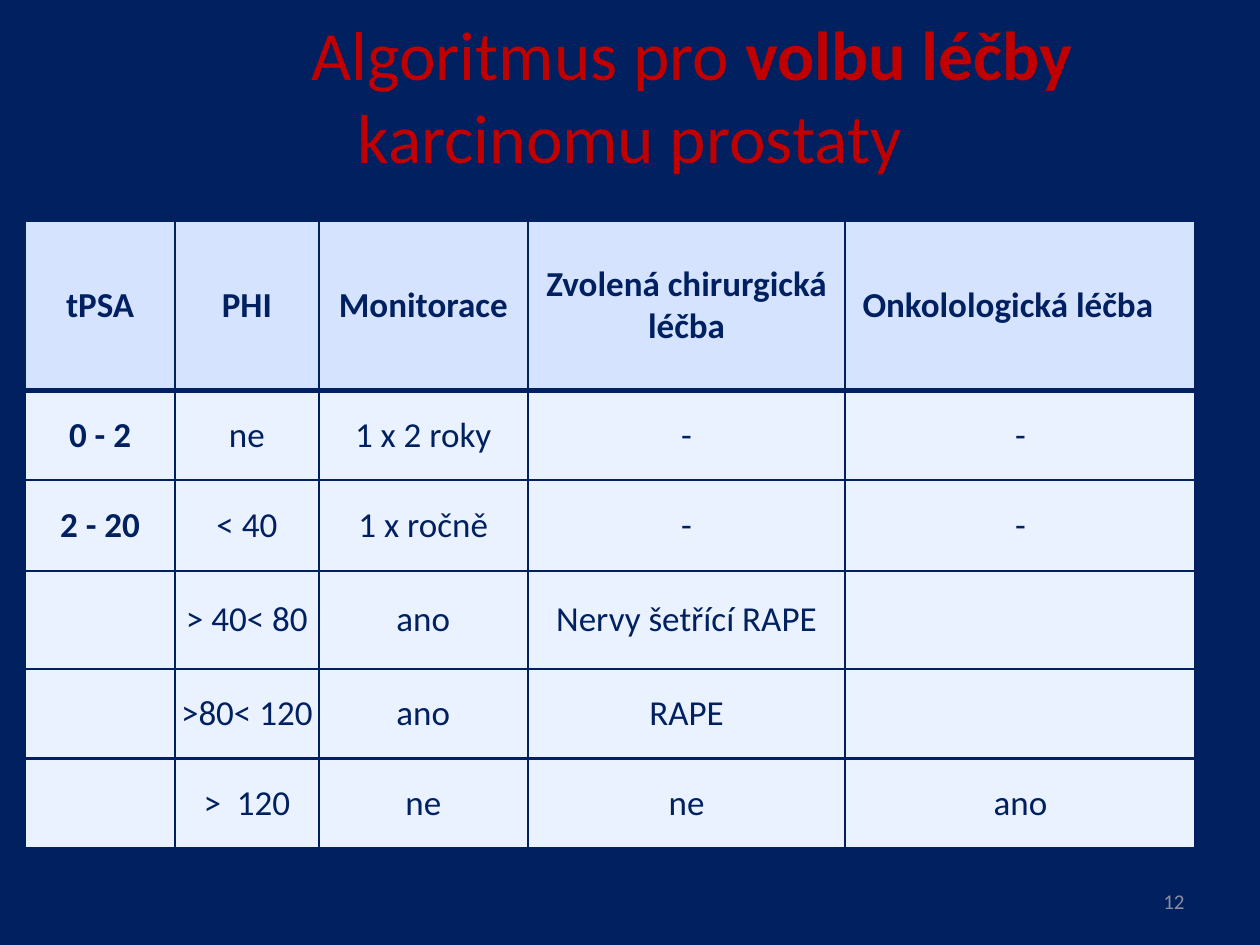
from dataclasses import dataclass

from lxml.etree import SubElement
from pptx import Presentation
from pptx.dml.color import RGBColor
from pptx.enum.text import MSO_ANCHOR, PP_ALIGN
from pptx.oxml.ns import qn
from pptx.util import Inches, Pt

COLORS = {"navy": "002060", "red": "C00000", "gray": "8C8D9D",
          "head": "D5E3FF", "body": "EAF1FF"}
FONT = "Calibri"


@dataclass
class Row:
    height: float
    cells: tuple[str, ...]


WIDTHS = (1.19, 1.14, 1.66, 2.52, 2.78)
ROWS = (
    Row(1.35, ("tPSA", "PHI", "Monitorace", "Zvolená chirurgická léčba",
               "Onkolologická léčba")),
    Row(0.71, ("0 - 2", "ne", "1 x 2 roky", "-", "-")),
    Row(0.72, ("2 - 20", "< 40", "1 x ročně", "-", "-")),
    Row(0.78, ("", "> 40< 80", "ano", "Nervy šetřící RAPE", "")),
    Row(0.71, ("", ">80< 120", "ano", "RAPE", "")),
    Row(0.71, ("", ">  120", "ne", "ne", "ano")),
)


def rgb(name: str) -> RGBColor:
    return RGBColor.from_string(COLORS[name])


def write(frame, text: str, *, size: float, color: str, bold: bool = False,
          align=PP_ALIGN.CENTER) -> None:
    """Add one run to the first paragraph of a text frame."""
    para = frame.paragraphs[0]
    para.alignment = align
    run = para.add_run()
    run.text = text
    font = run.font
    font.name, font.size, font.bold = FONT, Pt(size), bold
    font.color.rgb = rgb(color)


def add_box(slide, left: float, top: float, width: float, height: float):
    box = slide.shapes.add_textbox(Inches(left), Inches(top),
                                   Inches(width), Inches(height))
    frame = box.text_frame
    frame.word_wrap = True
    frame.vertical_anchor = MSO_ANCHOR.MIDDLE
    return frame


def add_edge(cell, side: str, width: float) -> None:
    line = SubElement(cell._tc.get_or_add_tcPr(), qn(f"a:ln{side}"),
                      w=str(Pt(width)))
    fill = SubElement(line, qn("a:solidFill"))
    SubElement(fill, qn("a:srgbClr"), val=COLORS["navy"])


def fill_cell(cell, text: str, row: int, col: int) -> None:
    cell.margin_left = cell.margin_top = cell.margin_bottom = 0
    # The last heading sits a little left of centre
    cell.margin_right = Inches(0.2 if (row, col) == (0, 4) else 0)
    cell.vertical_anchor = MSO_ANCHOR.MIDDLE
    for side in "LRTB":
        thick = (row, side) in ((0, "B"), (1, "T"))
        add_edge(cell, side, 3 if thick else 1.5)
    cell.fill.solid()
    cell.fill.fore_color.rgb = rgb("body" if row else "head")
    if text:
        write(cell.text_frame, text, size=20, color="navy",
              bold=row == 0 or col == 0)


def add_grid(slide) -> None:
    height = sum(row.height for row in ROWS)
    table = slide.shapes.add_table(
        len(ROWS), len(WIDTHS), Inches(0.2), Inches(1.75),
        Inches(sum(WIDTHS)), Inches(height)).table
    for col, width in enumerate(WIDTHS):
        table.columns[col].width = Inches(width)
    for i, row in enumerate(ROWS):
        table.rows[i].height = Inches(row.height)
        for j, text in enumerate(row.cells):
            fill_cell(table.cell(i, j), text, i, j)


def main() -> None:
    deck = Presentation()
    deck.slide_width, deck.slide_height = Inches(10), Inches(7.5)
    slide = deck.slides.add_slide(deck.slide_layouts[6])
    slide.background.fill.solid()
    slide.background.fill.fore_color.rgb = rgb("navy")

    # Title, with its first line indented
    title = add_box(slide, 0.5, 0.27, 9, 0.95)
    title.paragraphs[0]._p.get_or_add_pPr().set("indent", str(Inches(0.98)))
    for text, bold in (("Algoritmus pro", False), (" volbu léčby", True),
                       (" karcinomu prostaty", False)):
        write(title, text, size=39.6, color="red", bold=bold)

    # Treatment table
    add_grid(slide)

    # Page number
    write(add_box(slide, 7.17, 6.95, 2.33, 0.4), "12", size=12, color="gray",
          align=PP_ALIGN.RIGHT)
    deck.save("out.pptx")


if __name__ == "__main__":
    main()
